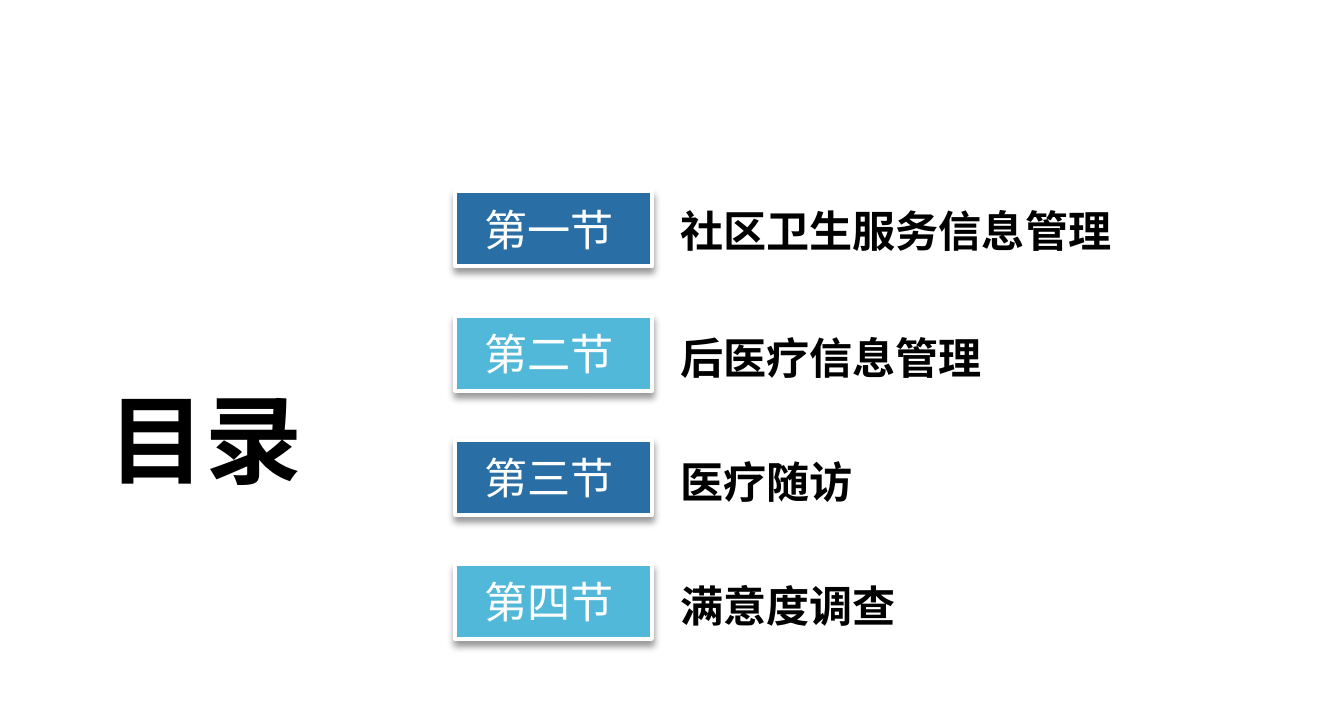
from dataclasses import dataclass

from lxml import etree
from pptx import Presentation
from pptx.dml.color import RGBColor
from pptx.enum.shapes import MSO_SHAPE
from pptx.enum.text import MSO_ANCHOR, MSO_AUTO_SIZE, PP_ALIGN
from pptx.oxml import parse_xml
from pptx.oxml.ns import nsdecls, qn
from pptx.util import Inches, Pt

RECTANGLE = MSO_SHAPE.RECTANGLE
TOP, MIDDLE = MSO_ANCHOR.TOP, MSO_ANCHOR.MIDDLE
LEFT, CENTER = PP_ALIGN.LEFT, PP_ALIGN.CENTER
FIT_SHAPE, NO_FIT = MSO_AUTO_SIZE.SHAPE_TO_FIT_TEXT, MSO_AUTO_SIZE.NONE
TITLE_ONLY = 5


@dataclass(frozen=True)
class Theme:
    black: RGBColor = RGBColor(0x00, 0x00, 0x00)
    white: RGBColor = RGBColor(0xFF, 0xFF, 0xFF)
    tag_fills: tuple = (RGBColor(0x29, 0x6F, 0xA5), RGBColor(0x52, 0xB8, 0xDA))
    latin_font: str = "Times New Roman"
    chinese_font: str = "Noto Sans CJK SC"
    title_size: Pt = Pt(54)
    entry_size: Pt = Pt(24)
    tag_line: Pt = Pt(2.25)


THEME = Theme()

# Tag, caption, caption width, caption drop below the top of the tag
SECTIONS = [
    ("第一节 ", "社区卫生服务信息管理", 3.94, 0.05),
    ("第二节 ", "后医疗信息管理", 3.3, 0.07),
    ("第三节 ", "医疗随访", 3.3, 0.07),
    ("第四节 ", "满意度调查", 3.3, 0.07),
]
SECTION_PITCH = 0.96
TAG_WIDTH, TAG_HEIGHT = 1.52, 0.58
CAPTION_INDENT, CAPTION_HEIGHT = 1.64, 0.5


def write_text(frame, text, size, color, latin, bold=False, align=LEFT):
    para = frame.paragraphs[0]
    para.text = text
    para.alignment = align
    font = para.font
    font.size = size
    font.bold = bold
    font.color.rgb = color
    font.name = latin
    defaults = para._p.pPr.find(qn("a:defRPr"))
    etree.SubElement(defaults, qn("a:ea")).set("typeface", THEME.chinese_font)


def add_soft_shadow(shape):
    shape._element.spPr.append(parse_xml(
        f'<a:effectLst {nsdecls("a")}>'
        f'<a:outerShdw blurRad="{Pt(4)}" dist="{Pt(3)}" dir="5400000" rotWithShape="0">'
        '<a:srgbClr val="000000"><a:alpha val="40000"/></a:srgbClr>'
        '</a:outerShdw></a:effectLst>'))


def place_title(page, left, top, width, height):
    title = page.shapes.title
    title.left, title.top = Inches(left), Inches(top)
    title.width, title.height = Inches(width), Inches(height)
    frame = title.text_frame
    frame.word_wrap = False
    frame.auto_size = FIT_SHAPE
    frame.vertical_anchor = TOP
    write_text(frame, "目录", THEME.title_size, THEME.black,
               THEME.chinese_font, bold=True)


def add_tag(page, left, top, text, fill):
    tag = page.shapes.add_shape(RECTANGLE, Inches(left), Inches(top),
                                Inches(TAG_WIDTH), Inches(TAG_HEIGHT))
    tag.fill.solid()
    tag.fill.fore_color.rgb = fill
    tag.line.color.rgb = THEME.white
    tag.line.width = THEME.tag_line
    add_soft_shadow(tag)
    frame = tag.text_frame
    frame.auto_size = NO_FIT
    frame.vertical_anchor = MIDDLE
    write_text(frame, text, THEME.entry_size, THEME.white,
               THEME.latin_font, align=CENTER)


def add_caption(page, left, top, width, text):
    caption = page.shapes.add_textbox(Inches(left), Inches(top),
                                      Inches(width), Inches(CAPTION_HEIGHT))
    frame = caption.text_frame
    frame.word_wrap = True
    frame.auto_size = FIT_SHAPE
    write_text(frame, text, THEME.entry_size, THEME.black,
               THEME.latin_font, bold=True)


def add_section_list(page, left, top):
    for index, (tag, caption, width, drop) in enumerate(SECTIONS):
        row_top = top + index * SECTION_PITCH
        fill = THEME.tag_fills[index % len(THEME.tag_fills)]
        add_tag(page, left, row_top, tag, fill)
        add_caption(page, left + CAPTION_INDENT, row_top + drop, width, caption)


def main():
    deck = Presentation()
    deck.slide_width, deck.slide_height = Inches(10.39), Inches(5.62)
    page = deck.slides.add_slide(deck.slide_layouts[TITLE_ONLY])
    place_title(page, 0.74, 2.88, 1.79, 1.01)
    add_section_list(page, 3.52, 1.48)
    deck.save("out.pptx")


if __name__ == "__main__":
    main()
